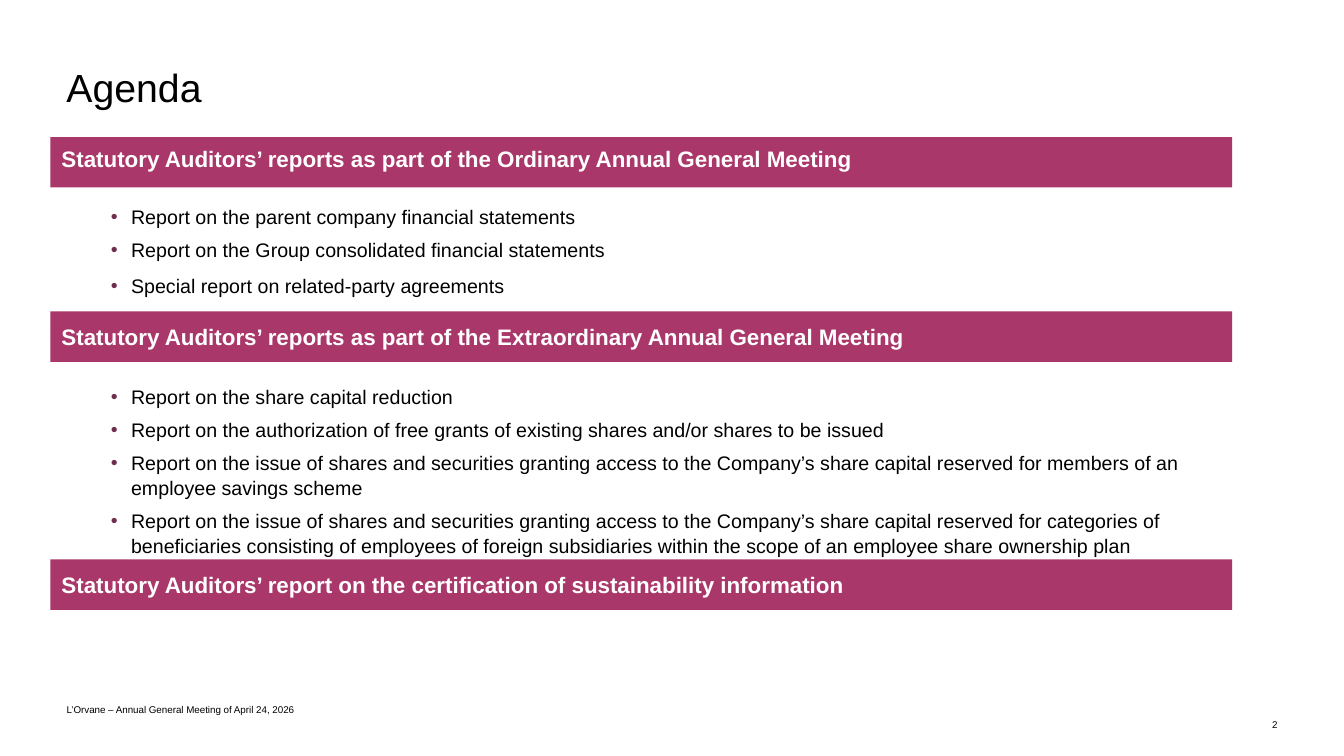
from lxml import etree
from pptx import Presentation
from pptx.dml.color import RGBColor
from pptx.enum.shapes import MSO_SHAPE
from pptx.enum.text import MSO_ANCHOR, PP_ALIGN
from pptx.oxml.ns import qn
from pptx.util import Inches, Pt

RECT = MSO_SHAPE.RECTANGLE
TOP, MIDDLE, BOTTOM = MSO_ANCHOR.TOP, MSO_ANCHOR.MIDDLE, MSO_ANCHOR.BOTTOM
LEFT, RIGHT = PP_ALIGN.LEFT, PP_ALIGN.RIGHT
PLUM = RGBColor(0xAA, 0x37, 0x69)
BLACK = RGBColor(0, 0, 0)
WHITE = RGBColor(0xFF, 0xFF, 0xFF)
DOT = "702E4F"
FONT = "Arial"
EDGE, WIDTH, BAR = 0.5, 11.72, 0.5

LABELS = [
    ("Agenda", (0.66, 0.7, 9, 0.36), 28, TOP, LEFT, 0.85),
    ("2", (11.27, 7.1, 1.4, 0.15), 7, BOTTOM, RIGHT, 1),
    ("L’Orvane – Annual General Meeting of April 24, 2026",
     (0.66, 6.95, 5.81, 0.15), 7, BOTTOM, LEFT, 1),
]
SECTIONS = [
    {"head": "Statutory Auditors’ reports as part of the Ordinary Annual General Meeting",
     "top": 1.36, "lift": 0.08, "list": (2.02, 1.0),
     "items": [
         ("Report on the parent company financial statements", 0),
         ("Report on the Group consolidated financial statements", 6),
         ("Special report on related-party agreements", 8)]},
    {"head": "Statutory Auditors’ reports as part of the Extraordinary Annual General Meeting",
     "top": 3.09, "lift": 0, "list": (3.81, 1.7),
     "items": [
         ("Report on the share capital reduction", 0),
         ("Report on the authorization of free grants of existing shares "
          "and/or shares to be issued", 6),
         ("Report on the issue of shares and securities granting access to the "
          "Company’s share capital reserved for members of an employee savings scheme", 6),
         ("Report on the issue of shares and securities granting access to the "
          "Company’s share capital reserved for categories of beneficiaries consisting "
          "of employees of foreign subsidiaries within the scope of an employee share "
          "ownership plan", 6)]},
    {"head": "Statutory Auditors’ report on the certification of sustainability information",
     "top": 5.55, "lift": 0, "list": None, "items": []},
]


def set_frame(shape, anchor, left=0, bottom=0):
    frame = shape.text_frame
    frame.word_wrap = True
    frame.vertical_anchor = anchor
    frame.margin_top = frame.margin_right = 0
    frame.margin_left, frame.margin_bottom = Inches(left), Inches(bottom)
    return frame


def add_box(slide, at, anchor=TOP):
    return set_frame(slide.shapes.add_textbox(*map(Inches, at)), anchor)


def add_text(para, text, size, color=BLACK, bold=False):
    run = para.add_run()
    run.text = text
    font = run.font
    font.name, font.size, font.bold = FONT, Pt(size), bold
    font.color.rgb = color


def add_dot(para):
    props = para._p.get_or_add_pPr()
    props.set("marL", str(Inches(0.8)))
    props.set("indent", str(Inches(-0.2)))
    color = etree.SubElement(props, qn("a:buClr"))
    etree.SubElement(color, qn("a:srgbClr"), val=DOT)
    etree.SubElement(props, qn("a:buFont"), typeface=FONT)
    etree.SubElement(props, qn("a:buChar"), char="•")


def add_bar(slide, part):
    bar = slide.shapes.add_shape(
        RECT, *map(Inches, (EDGE, part["top"], WIDTH, BAR)))
    bar.shadow.inherit = False
    bar.fill.solid()
    bar.fill.fore_color.rgb = PLUM
    bar.line.fill.background()
    para = set_frame(bar, MIDDLE, 0.11, part["lift"]).paragraphs[0]
    para.alignment = LEFT
    add_text(para, part["head"], 16, WHITE, True)


def add_list(slide, part):
    top, height = part["list"]
    frame = add_box(slide, (EDGE, top, WIDTH, height))
    for i, (text, gap) in enumerate(part["items"]):
        para = frame.add_paragraph() if i else frame.paragraphs[0]
        add_dot(para)
        para.line_spacing = 1.05
        if gap:
            para.space_before = Pt(gap)
        add_text(para, text, 14)


def main():
    deck = Presentation()
    deck.slide_width, deck.slide_height = Inches(13.33), Inches(7.5)
    slide = deck.slides.add_slide(deck.slide_layouts[6])
    for part in SECTIONS:
        add_bar(slide, part)
        if part["items"]:
            add_list(slide, part)
    for text, at, size, anchor, align, pitch in LABELS:
        para = add_box(slide, at, anchor).paragraphs[0]
        para.alignment, para.line_spacing = align, pitch
        add_text(para, text, size)
    deck.save("out.pptx")


if __name__ == "__main__":
    main()
